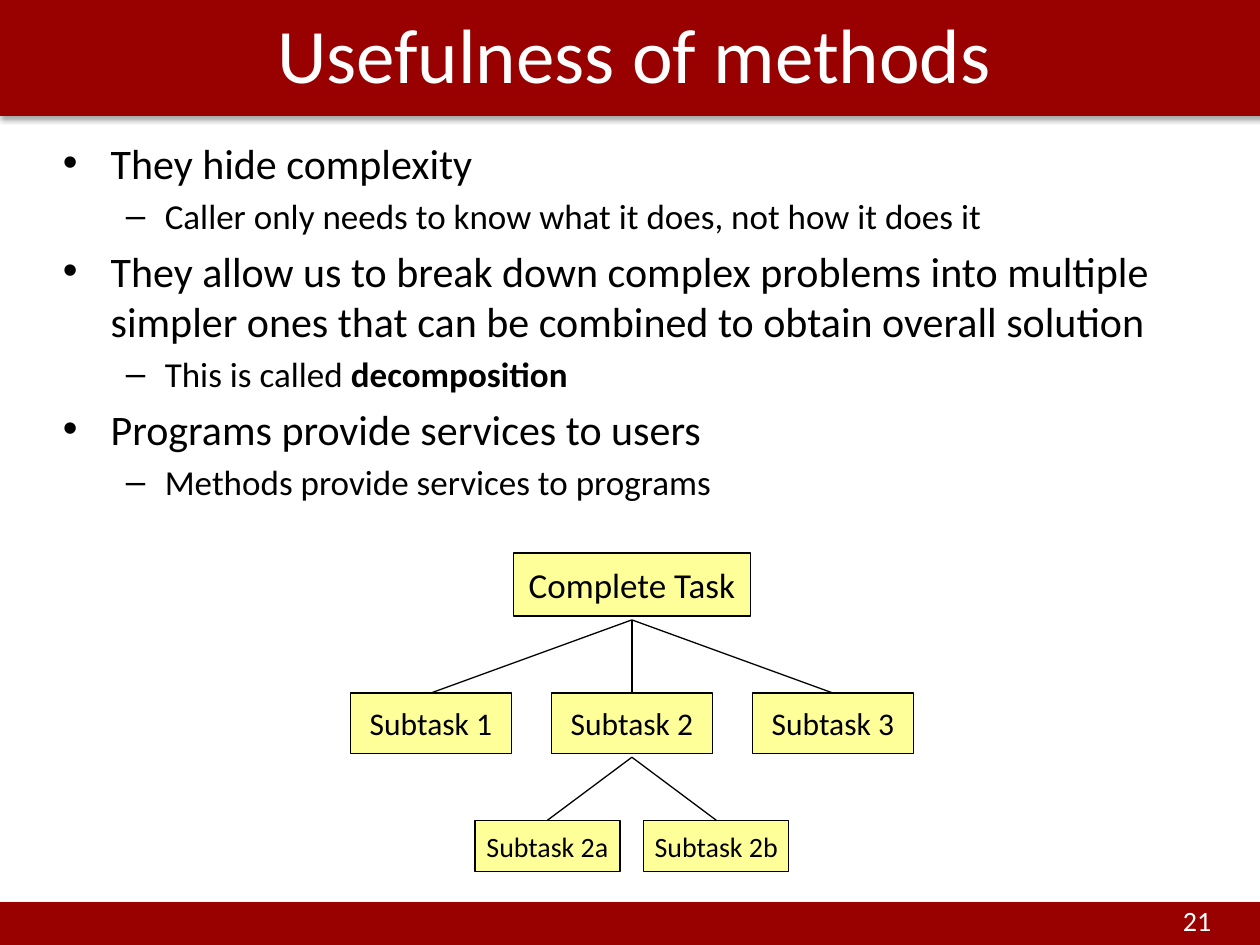
from dataclasses import dataclass

from lxml import etree
from pptx import Presentation
from pptx.dml.color import RGBColor
from pptx.enum.shapes import MSO_CONNECTOR, MSO_SHAPE
from pptx.enum.text import MSO_ANCHOR, PP_ALIGN
from pptx.oxml import parse_xml
from pptx.oxml.ns import nsdecls, qn
from pptx.util import Inches, Pt


@dataclass(frozen=True)
class Theme:
    font: str = "Calibri"
    red: RGBColor = RGBColor(0x99, 0x00, 0x00)
    yellow: RGBColor = RGBColor(0xFF, 0xFF, 0x99)
    black: RGBColor = RGBColor(0, 0, 0)
    white: RGBColor = RGBColor(0xFF, 0xFF, 0xFF)
    title: int = 44
    number: int = 16
    body: tuple = (24, 20)
    tree: tuple = (20, 18, 16)
    line: float = 0.75


THEME = Theme()
# Each level: bullet, text indent, hanging indent
BULLETS = (("•", 0.38, 0.38), ("–", 0.81, 0.31))
# Each paragraph: level, then runs of (text, bold)
BODY = (
    (0, [("They hide complexity", False)]),
    (1, [("Caller only needs to know what it does, not how it does it", False)]),
    (0, [("They allow us to break down complex problems into multiple "
          "simpler ones that can be combined to obtain overall solution", False)]),
    (1, [("This is called ", False), ("decomposition", True)]),
    (0, [("Programs provide services to users", False)]),
    (1, [("Methods provide services to programs", False)]),
)


def inches(*values):
    return [Inches(v) for v in values]


def add_run(p, text, size, color, bold=False):
    r = p.add_run()
    r.text = text
    r.font.color.rgb = color
    formats = {"name": THEME.font, "size": Pt(size), "bold": bold}
    for name, value in formats.items():
        setattr(r.font, name, value)


def add_text(s, box, wrap=True, anchor=MSO_ANCHOR.TOP):
    tf = s.shapes.add_textbox(*inches(*box)).text_frame
    tf.word_wrap, tf.vertical_anchor = wrap, anchor
    return tf


def add_band(s, box):
    """Red band with a soft shadow below it."""
    sp = s.shapes.add_shape(MSO_SHAPE.RECTANGLE, *inches(*box))
    sp.fill.solid()
    sp.fill.fore_color.rgb = THEME.red
    sp.line.fill.background()
    sp._element.spPr.append(parse_xml(
        f'<a:effectLst {nsdecls("a")}>'
        f'<a:outerShdw blurRad="{Pt(3.1)}" dist="{Pt(1.8)}" dir="5400000" rotWithShape="0">'
        '<a:srgbClr val="000000"><a:alpha val="35000"/></a:srgbClr>'
        '</a:outerShdw></a:effectLst>'))


def add_title(s, box, text):
    tf = add_text(s, box, anchor=MSO_ANCHOR.MIDDLE)
    p = tf.paragraphs[0]
    p.alignment = PP_ALIGN.CENTER
    add_run(p, text, THEME.title, THEME.white)


def add_number(s, box, text):
    add_run(add_text(s, box).paragraphs[0], text, THEME.number, THEME.white)


def add_body(s, box, items):
    tf = add_text(s, box)
    for i, (level, runs) in enumerate(items):
        p = tf.add_paragraph() if i else tf.paragraphs[0]
        size = THEME.body[level]
        p.level, p.space_before = level, Pt(size * 0.2)
        char, left, hang = BULLETS[level]
        pPr = p._p.get_or_add_pPr()
        pPr.set("marL", str(Inches(left)))
        pPr.set("indent", str(-Inches(hang)))
        etree.SubElement(pPr, qn("a:buFont")).set("typeface", "Arial")
        etree.SubElement(pPr, qn("a:buChar")).set("char", char)
        for text, bold in runs:
            add_run(p, text, size, THEME.black, bold)


def add_task(s, box, text, size):
    sp = s.shapes.add_shape(MSO_SHAPE.RECTANGLE, *inches(*box))
    sp.shadow.inherit = False
    sp.fill.solid()
    sp.fill.fore_color.rgb = THEME.yellow
    sp.line.color.rgb, sp.line.width = THEME.black, Pt(THEME.line)
    tf = sp.text_frame
    tf.word_wrap, tf.vertical_anchor = False, MSO_ANCHOR.MIDDLE
    p = tf.paragraphs[0]
    p.alignment = PP_ALIGN.CENTER
    add_run(p, text, size, THEME.black)


def add_branch(s, start, end):
    c = s.shapes.add_connector(MSO_CONNECTOR.STRAIGHT, *inches(*start, *end))
    c.line.color.rgb, c.line.width = THEME.black, Pt(THEME.line)
    etree.SubElement(c._element.spPr, qn("a:effectLst"))


def add_tree(s, box):
    """Rows of tasks centred in the box, each row branching from the middle task above."""
    left, top, width, height = box
    mid = left + width / 2
    # Each row: names, top, task width, task height, pitch
    rows = (
        (("Complete Task",), 0, 1.88, 0.5, 0),
        (("Subtask 1", "Subtask 2", "Subtask 3"), 1.11, 1.28, 0.48, 1.595),
        (("Subtask 2a", "Subtask 2b"), height - 0.41, 1.15, 0.41, 1.34),
    )
    parent_bottom = None
    for (names, dy, w, h, pitch), size in zip(rows, THEME.tree):
        y = top + dy
        for i, name in enumerate(names):
            x = mid + (i - (len(names) - 1) / 2) * pitch
            add_task(s, (x - w / 2, y, w, h), name, size)
            if parent_bottom:
                add_branch(s, (mid, parent_bottom + 0.03), (x, y))
        parent_bottom = y + h


def main():
    prs = Presentation()
    prs.slide_width, prs.slide_height = inches(10, 7.5)
    s = prs.slides.add_slide(prs.slide_layouts[6])
    add_band(s, (0, 7.16, 10.04, 0.34))
    add_band(s, (0, -0.01, 10.04, 0.93))
    add_number(s, (9.29, 7.12, 0.98, 0.37), "21")
    add_title(s, (-0.07, -0.21, 10.21, 1.25), "Usefulness of methods")
    add_body(s, (0.4, 1.04, 9.23, 3.31), BODY)
    add_tree(s, (2.78, 4.39, 4.47, 2.53))
    prs.save("out.pptx")


if __name__ == "__main__":
    main()
